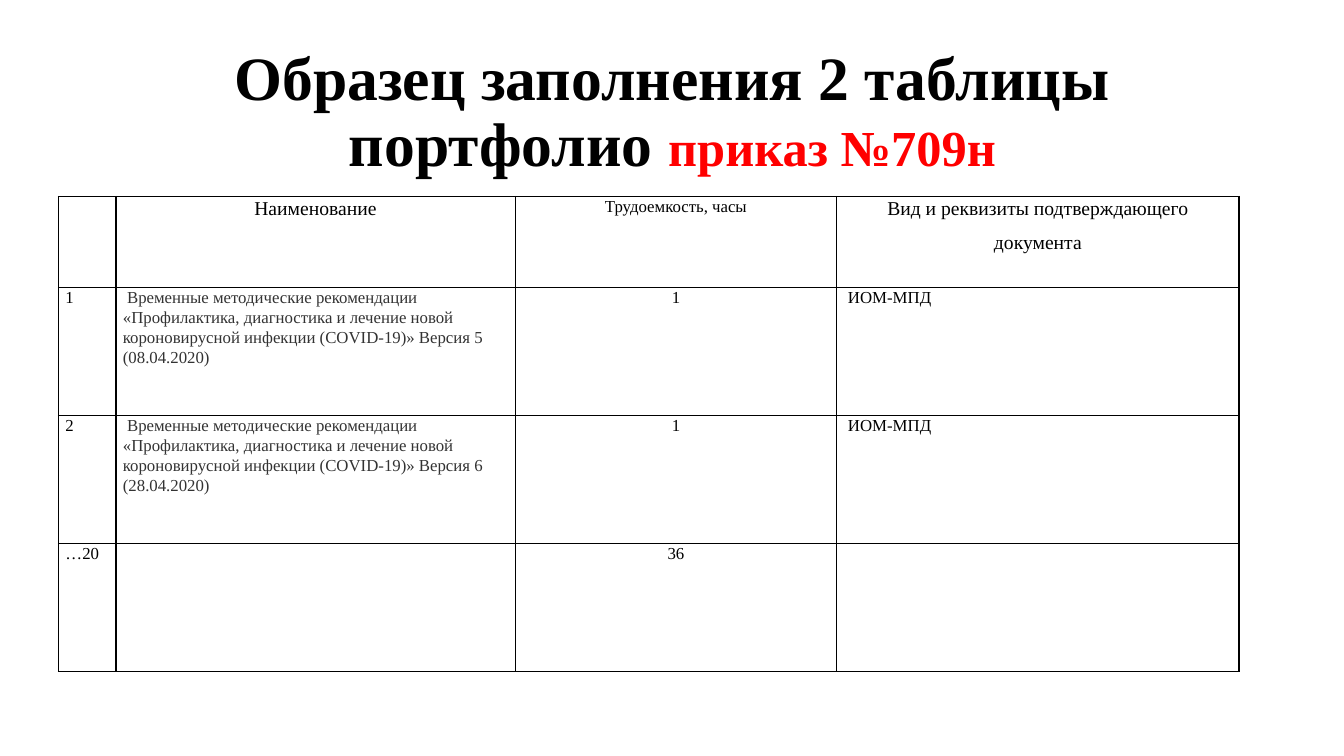
"""Build the portfolio table sample slide."""
import dataclasses

import lxml.etree
import pptx
import pptx.dml.color
import pptx.enum.text
import pptx.oxml.ns
import pptx.util

Inches = pptx.util.Inches
Pt = pptx.util.Pt
RGB = pptx.dml.color.RGBColor.from_string
ALIGN = pptx.enum.text.PP_ALIGN


@dataclasses.dataclass(frozen=True)
class Theme:
    font: str = "Times New Roman"
    text: str = "000000"
    accent: str = "FF0000"
    muted: str = "333333"
    title: int = 44
    subtitle: int = 36
    header: int = 14
    body: int = 12
    border: float = 1


THEME = Theme()
COLUMNS = (0.57, 3.96, 3.19, 3.99)
ROWS = (0.9, 1.27, 1.27, 1.27)
ALIGNMENTS = (ALIGN.JUSTIFY, ALIGN.LEFT, ALIGN.CENTER, ALIGN.JUSTIFY)
GUIDELINE = (" Временные методические рекомендации «Профилактика, диагностика и лечение "
             "новой короновирусной инфекции (COVID-19)» Версия {} ({})")
CELLS = (
    ("", "Наименование", "Трудоемкость, часы", "Вид и реквизиты подтверждающего\nдокумента"),
    ("1", GUIDELINE.format(5, "08.04.2020"), "1", " ИОМ-МПД"),
    ("2", GUIDELINE.format(6, "28.04.2020"), "1", " ИОМ-МПД"),
    ("…20", "", "36", ""),
)


def style_font(font, size, color, bold=False):
    font.name = THEME.font
    font.size = Pt(size)
    font.color.rgb = RGB(color)
    font.bold = bold


def add_title(slide, parts):
    sp = slide.shapes.add_textbox(Inches(0.92), Inches(0.4), Inches(11.5), Inches(1.45))
    tf = sp.text_frame
    tf.word_wrap = True
    tf.vertical_anchor = pptx.enum.text.MSO_ANCHOR.MIDDLE
    p = tf.paragraphs[0]
    p.alignment = ALIGN.CENTER
    p.line_spacing = 0.9
    for text, size, color in parts:
        r = p.add_run()
        r.text = text
        style_font(r.font, size, color, bold=True)


def add_borders(cell):
    tc_pr = cell._tc.get_or_add_tcPr()
    qn = pptx.oxml.ns.qn
    for position, side in enumerate(("a:lnL", "a:lnR", "a:lnT", "a:lnB")):
        line = lxml.etree.Element(qn(side), w=str(Pt(THEME.border)))
        fill = lxml.etree.SubElement(line, qn("a:solidFill"))
        lxml.etree.SubElement(fill, qn("a:srgbClr"), val=THEME.text)
        tc_pr.insert(position, line)


def fill_cell(cell, text, size, color, alignment):
    cell.margin_left = cell.margin_right = Inches(0.07)
    cell.margin_top = cell.margin_bottom = 0
    cell.fill.background()
    add_borders(cell)
    cell.text = text
    for p in cell.text_frame.paragraphs:
        p.alignment = alignment
        p.line_spacing = 1.07
        p.space_after = Pt(8)
        style_font(p.font, size, color)


def add_table(slide):
    frame = slide.shapes.add_table(len(ROWS), len(COLUMNS), Inches(0.58), Inches(1.95),
                                   Inches(sum(COLUMNS)), Inches(sum(ROWS)))
    table = frame.table
    table.first_row = table.horz_banding = False
    for column, width in zip(table.columns, COLUMNS):
        column.width = Inches(width)
    for row, height in zip(table.rows, ROWS):
        row.height = Inches(height)
    for i, texts in enumerate(CELLS):
        for j, text in enumerate(texts):
            header = i == 0
            size = THEME.header if header and j != 2 else THEME.body
            color = THEME.muted if j == 1 and not header else THEME.text
            alignment = ALIGN.CENTER if header else ALIGNMENTS[j]
            fill_cell(table.cell(i, j), text, size, color, alignment)


def main():
    prs = pptx.Presentation()
    prs.slide_width = Inches(13.33)
    prs.slide_height = Inches(7.5)
    slide = prs.slides.add_slide(prs.slide_layouts[6])
    add_title(slide, (
        ("Образец заполнения 2 таблицы портфолио ", THEME.title, THEME.text),
        ("приказ №709н", THEME.subtitle, THEME.accent),
    ))
    add_table(slide)
    prs.save("out.pptx")


if __name__ == "__main__":
    main()
